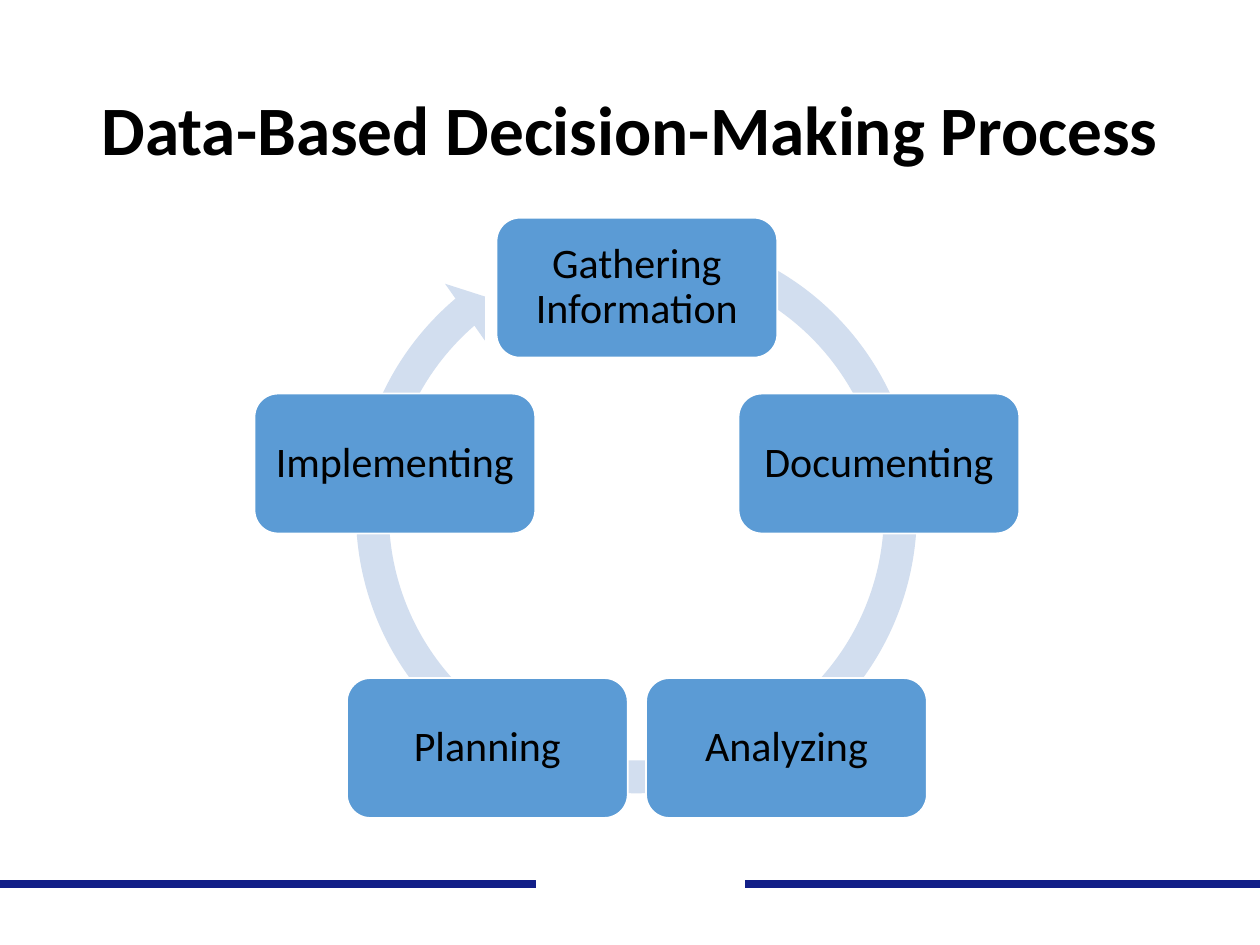
import math

import pptx
import pptx.dml.color
import pptx.enum.shapes
import pptx.enum.text
import pptx.oxml.ns
import pptx.util
from lxml import etree

Cm = pptx.util.Cm
Pt = pptx.util.Pt
RGBColor = pptx.dml.color.RGBColor
Shape = pptx.enum.shapes.MSO_SHAPE

WHITE = RGBColor(0xFF, 0xFF, 0xFF)
BLACK = RGBColor(0x00, 0x00, 0x00)
NAVY = RGBColor(0x12, 0x1F, 0x88)
STEP_BLUE = RGBColor(0x5B, 0x9B, 0xD5)
PALE_BLUE = RGBColor(0xD2, 0xDE, 0xEF)

STEPS = ["Gathering Information", "Documenting", "Analyzing", "Planning", "Implementing"]
CYCLE_X, CYCLE_Y, CYCLE_RADIUS = 12.84, 10.93, 5.13
STEP_WIDTH, STEP_HEIGHT = 5.66, 2.82


def write_centred(frame, text, size, bold=False):
    frame.word_wrap = True
    frame.vertical_anchor = pptx.enum.text.MSO_ANCHOR.MIDDLE
    paragraph = frame.paragraphs[0]
    paragraph.text = text
    paragraph.alignment = pptx.enum.text.PP_ALIGN.CENTER
    paragraph.line_spacing = 0.9
    paragraph.font.name = "Calibri"
    paragraph.font.size = Pt(size)
    paragraph.font.bold = bold
    paragraph.font.color.rgb = BLACK


def add_footer_rule(slide, start, end, color):
    y = Cm(17.83)
    rule = slide.shapes.add_connector(
        pptx.enum.shapes.MSO_CONNECTOR.STRAIGHT, Cm(start), y, Cm(end), y)
    rule.line.color.rgb = color
    rule.line.width = Pt(4.5)
    etree.SubElement(rule._element.spPr, pptx.oxml.ns.qn("a:effectLst"))


def add_title(slide, text):
    title = slide.shapes.add_textbox(Cm(1.75), Cm(0.97), Cm(21.9), Cm(3.43))
    write_centred(title.text_frame, text, 39.6, bold=True)


def add_cycle_arrow(slide):
    arrow = slide.shapes.add_shape(
        Shape.CIRCULAR_ARROW, Cm(6.81), Cm(4.32), Cm(12.04), Cm(12.04))
    # Band thickness, head angle, head end, tail start, head half-width
    for index, value in enumerate([0.055, 3.307, 137.702, 173.895, 0.058]):
        arrow.adjustments[index] = value
    arrow.shadow.inherit = False
    arrow.fill.solid()
    arrow.fill.fore_color.rgb = PALE_BLUE
    arrow.line.fill.background()


def add_step(slide, text, center_x, center_y):
    step = slide.shapes.add_shape(
        Shape.ROUNDED_RECTANGLE,
        Cm(center_x - STEP_WIDTH / 2), Cm(center_y - STEP_HEIGHT / 2),
        Cm(STEP_WIDTH), Cm(STEP_HEIGHT))
    step.shadow.inherit = False
    step.fill.solid()
    step.fill.fore_color.rgb = STEP_BLUE
    step.line.color.rgb = WHITE
    step.line.width = Pt(1)
    frame = step.text_frame
    frame.margin_left = frame.margin_right = Cm(0.24)
    frame.margin_top = frame.margin_bottom = Cm(0.24)
    write_centred(frame, text, 24)


def add_cycle(slide):
    """Place the steps clockwise from the top at equal angles."""
    add_cycle_arrow(slide)
    for index, text in enumerate(STEPS):
        angle = math.tau * index / len(STEPS)
        add_step(slide, text,
                 CYCLE_X + CYCLE_RADIUS * math.sin(angle),
                 CYCLE_Y - CYCLE_RADIUS * math.cos(angle))


def main():
    deck = pptx.Presentation()
    deck.slide_width, deck.slide_height = Cm(25.4), Cm(19.05)
    slide = deck.slides.add_slide(deck.slide_layouts[6])
    add_footer_rule(slide, 0, 25.4, NAVY)
    add_footer_rule(slide, 10.8, 15.01, WHITE)
    add_title(slide, "Data-Based Decision-Making Process")
    add_cycle(slide)
    deck.save("out.pptx")


if __name__ == "__main__":
    main()
